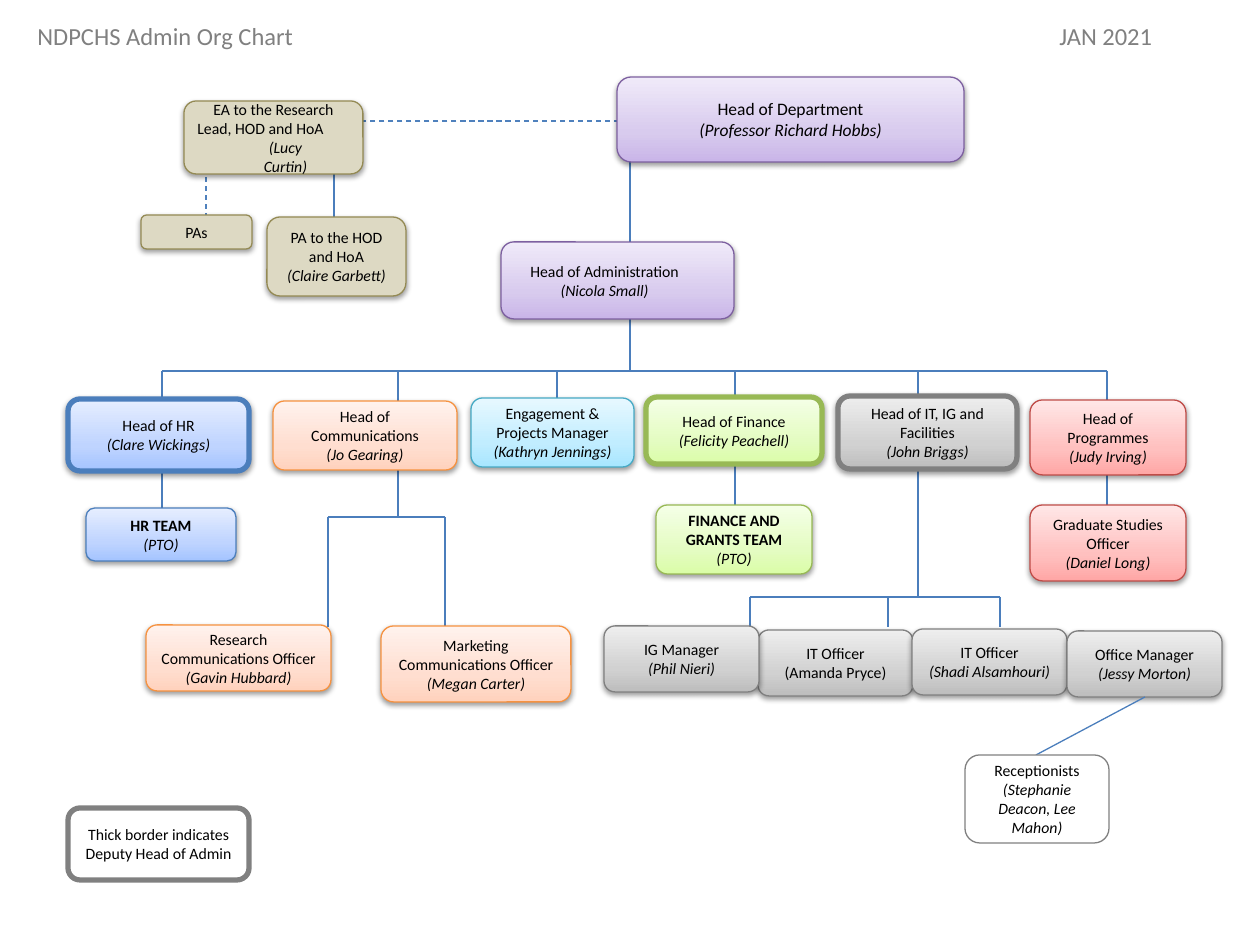
from copy import deepcopy
from typing import NamedTuple

from pptx import Presentation
from pptx.dml.color import RGBColor
from pptx.enum.dml import MSO_LINE
from pptx.enum.shapes import MSO_CONNECTOR, MSO_SHAPE
from pptx.enum.text import MSO_ANCHOR, PP_ALIGN
from pptx.oxml import parse_xml
from pptx.oxml.ns import nsdecls, qn
from pptx.util import Pt

PX = 914400 / 126
ROUNDED = MSO_SHAPE.ROUNDED_RECTANGLE
STRAIGHT = MSO_CONNECTOR.STRAIGHT
DASH = MSO_LINE.DASH
MIDDLE, TOP = MSO_ANCHOR.MIDDLE, MSO_ANCHOR.TOP
CENTER = PP_ALIGN.CENTER
FONT = "Calibri"
THIN, THICK = 0.75, 3
BLACK = RGBColor(0x00, 0x00, 0x00)
WHITE = RGBColor(0xFF, 0xFF, 0xFF)
GREY = RGBColor(0x80, 0x80, 0x80)
WIRE = RGBColor(0x4B, 0x7E, 0xBC)
DASHED_WIRE = RGBColor(0x4F, 0x81, 0xBD)
STOPS = (0, 0.35, 1)
SHADOW = (
    f'<a:outerShdw {nsdecls("a")} blurRad="40000" dist="20000" dir="5400000" rotWithShape="0">'
    '<a:srgbClr val="000000"><a:alpha val="38000"/></a:srgbClr></a:outerShdw>'
)


class Theme(NamedTuple):
    """Border colour and fill colours, from the bottom up, of a family of cards."""
    border: RGBColor
    fills: tuple = ()
    shadow: bool = True


class Line(NamedTuple):
    """One paragraph of a card, moved sideways by shift px, with an italic tail."""
    text: str
    bold: bool = False
    italic: bool = False
    shift: int = 0
    tail: str = ""


def palette(border, *fills):
    """Make a theme from hex colours."""
    return Theme(RGBColor.from_string(border), tuple(map(RGBColor.from_string, fills)))


PURPLE = palette("7D60A0", "C9B5E8", "D8CBEE", "F0EAF9")
BLUE = palette("4B7EBC", "A4C4FF", "BFD4FF", "E6EEFF")
ORANGE = palette("F69240", "FFD2BD", "FFDED0", "FFF2ED")
AQUA = palette("46AAC5", "A7E6FF", "C1EDFF", "E7F8FF")
GREEN = palette("98B955", "DAFDA7", "E4FCC2", "F5FFE7")
SILVER = palette("808080", "BDBDBD", "D1D1D1", "EEEEEE")
RED = palette("BF4C48", "FFA6A5", "FFC0BF", "FFE7E7")
TAN = palette("948A54", "DDD9C3")
PLAIN = Theme(GREY, (WHITE,), False)
HOLLOW = Theme(GREY, (), False)


def role(title, holder):
    """Give the lines of a job title and the italic name under it."""
    return [Line(title), Line(holder, italic=True)]


def team(title):
    """Give the lines of a team that is shown overleaf."""
    return [Line(title, bold=True), Line("(PTO)", italic=True)]


def emu(*lengths):
    """Turn px into EMU."""
    return [round(length * PX) for length in lengths]


def add_wire(page, origin, start, end, dashed=False):
    """Join two points given relative to the origin."""
    left, top = origin
    wire = page.shapes.add_connector(
        STRAIGHT, *emu(left + start[0], top + start[1], left + end[0], top + end[1]))
    wire.line.color.rgb = DASHED_WIRE if dashed else WIRE
    wire.line.width = Pt(THIN)
    if dashed:
        wire.line.dash_style = DASH
    wire._element.spPr.append(parse_xml(f'<a:effectLst {nsdecls("a")}/>'))


def paint(card, theme):
    """Fill a card with nothing, one colour or a vertical blend."""
    if not theme.fills:
        card.fill.background()
    elif len(theme.fills) == 1:
        card.fill.solid()
        card.fill.fore_color.rgb = theme.fills[0]
    else:
        card.fill.gradient()
        card.fill.gradient_angle = 90
        stops = card._element.spPr.find(".//" + qn("a:gsLst"))
        stops.insert(1, deepcopy(stops[0]))
        for stop, colour, position in zip(card.fill.gradient_stops, theme.fills, STOPS):
            stop.color.rgb = colour
            stop.position = position


def add_card(page, origin, box, theme, lines, border=THIN, size=9, inset=12):
    """Place a rounded card at a box given relative to the origin."""
    left, top, width, height = box
    card = page.shapes.add_shape(
        ROUNDED, *emu(origin[0] + left, origin[1] + top, width, height))
    card.shadow.inherit = False
    paint(card, theme)
    card.line.color.rgb = theme.border
    card.line.width = Pt(border)
    if theme.shadow:
        card._element.spPr.find(qn("a:effectLst")).append(parse_xml(SHADOW))
    frame = card.text_frame
    frame.word_wrap = True
    frame.vertical_anchor = MIDDLE
    frame.margin_left = frame.margin_right = emu(inset)[0]
    frame.margin_top = frame.margin_bottom = emu(inset / 2)[0]
    for index, line in enumerate(lines):
        para = frame.paragraphs[0] if index == 0 else frame.add_paragraph()
        para.alignment = CENTER
        if line.shift:
            side = "marL" if line.shift > 0 else "marR"
            para._p.get_or_add_pPr().set(side, str(emu(2 * abs(line.shift))[0]))
        para.font.name, para.font.size = FONT, Pt(size)
        para.font.bold, para.font.italic = line.bold, line.italic
        para.font.color.rgb = BLACK
        para.add_run().text = line.text
        if line.tail:
            span = para.add_run()
            span.text = line.tail
            span.font.italic = True


def draw_heading(page, box, text, anchor):
    """Write a grey heading in its box."""
    frame = page.shapes.add_textbox(*emu(*box)).text_frame
    frame.word_wrap = True
    frame.vertical_anchor = anchor
    para = frame.paragraphs[0]
    para.text = text
    para.font.name, para.font.size = FONT, Pt(14)
    para.font.color.rgb = GREY


def draw_leadership(page, origin):
    """Draw the two heads, the link to their assistant and the trunk."""
    add_wire(page, origin, (118, 44), (-230, 44), dashed=True)
    add_wire(page, origin, (129, 84), (129, 294))
    add_wire(page, origin, (-339, 294), (606, 294))
    add_card(page, origin, (116, 0, 347, 85), PURPLE,
             role("Head of Department", "(Professor Richard Hobbs)"), size=10)
    add_card(page, origin, (0, 165, 233, 77), PURPLE,
             [Line("Head of Administration", shift=-13), Line("(Nicola Small)", italic=True)])


def draw_support(page, origin):
    """Draw the executive assistant and the personal assistants."""
    add_wire(page, origin, (22, 40), (22, 122), dashed=True)
    add_wire(page, origin, (150, 40), (150, 122))
    add_card(page, origin, (0, 0, 179, 73), TAN,
             [Line("EA to the Research"), Line("Lead, HOD and HoA", shift=-13),
              Line("(Lucy Curtin)", italic=True, shift=25)], inset=9)
    add_card(page, origin, (-43, 114, 111, 34), TAN, [Line("PAs")])
    add_card(page, origin, (83, 116, 139, 79), TAN,
             role("PA to the HOD and HoA", "(Claire Garbett)"))


def draw_department(page, origin, theme, stem, head, members, border=THIN, drops=(), fall=0):
    """Draw a head hung from the trunk, with any members on branches below."""
    add_wire(page, origin, (0, 0), (0, stem))
    if drops:
        add_wire(page, origin, (drops[0], stem), (drops[-1], stem))
    for drop in drops:
        add_wire(page, origin, (drop, stem), (drop, stem + fall))
    add_card(page, origin, *head[:1], theme, head[1], border)
    for box, lines in members:
        add_card(page, origin, box, theme, lines)


def draw_reception(page, origin):
    """Draw the receptionists and their link to the office manager."""
    add_wire(page, origin, (180, -58), (71, 0))
    add_card(page, origin, (0, 0, 144, 88), PLAIN,
             role("Receptionists", "(Stephanie Deacon, Lee Mahon)"))


def draw_departments(page, trunk):
    """Draw the six departments along the trunk."""
    draw_department(page, (162, trunk), BLUE, 137,
                    ((-94, 28, 181, 72), role("Head of HR", "(Clare Wickings)")),
                    [((-76, 137, 150, 53), team("HR TEAM"))], THICK)
    research = [Line("Research Communications Officer ", tail="(Gavin Hubbard)")]
    draw_department(page, (398, trunk), ORANGE, 146,
                    ((-125, 30, 184, 69), role("Head of Communications", "(Jo Gearing)")),
                    [((-252, 254, 185, 66), research),
                     ((-17, 255, 190, 76),
                      role("Marketing Communications Officer", "(Megan Carter)"))],
                    drops=(-70, 47), fall=110)
    draw_department(page, (557, trunk), AQUA, 27,
                    ((-86, 27, 163, 69),
                     role("Engagement & Projects Manager", "(Kathryn Jennings)")), [])
    draw_department(page, (735, trunk), GREEN, 134,
                    ((-89, 26, 176, 67), role("Head of Finance", "(Felicity Peachell)")),
                    [((-79, 134, 156, 69), team("FINANCE AND GRANTS TEAM"))], THICK)
    staff = [(-160, 259, [Line("IT Officer"), Line("(Amanda Pryce)")]),
             (-6, 258, role("IT Officer", "(Shadi Alsamhouri)")),
             (149, 260, role("Office Manager", "(Jessy Morton)")),
             (-314, 255, role("IG Manager", "(Phil Nieri)"))]
    draw_department(page, (918, trunk), SILVER, 226,
                    ((-80, 25, 179, 73), role("Head of IT, IG and Facilities", "(John Briggs)")),
                    [((left, top, 155, 66), lines) for left, top, lines in staff],
                    THICK, (-168, -30, 82), 30)
    draw_department(page, (1107, trunk), RED, 134,
                    ((-77, 29, 156, 75), role("Head of Programmes", "(Judy Irving)")),
                    [((-77, 134, 156, 76), role("Graduate Studies Officer", "(Daniel Long)"))])


def main():
    """Build the one-page chart."""
    deck = Presentation()
    deck.slide_width, deck.slide_height = emu(1260, 945)
    page = deck.slides.add_slide(deck.slide_layouts[6])
    draw_heading(page, (25, 0, 780, 72), "NDPCHS Admin Org Chart", MIDDLE)
    draw_heading(page, (1047, 15, 197, 43), "JAN 2021", TOP)
    draw_leadership(page, (501, 77))
    draw_support(page, (184, 101))
    draw_departments(page, 371)
    draw_reception(page, (965, 755))
    add_card(page, (68, 808), (0, 0, 181, 72), HOLLOW,
             [Line("Thick border indicates Deputy Head of Admin")], THICK)
    deck.save("out.pptx")


if __name__ == "__main__":
    main()
